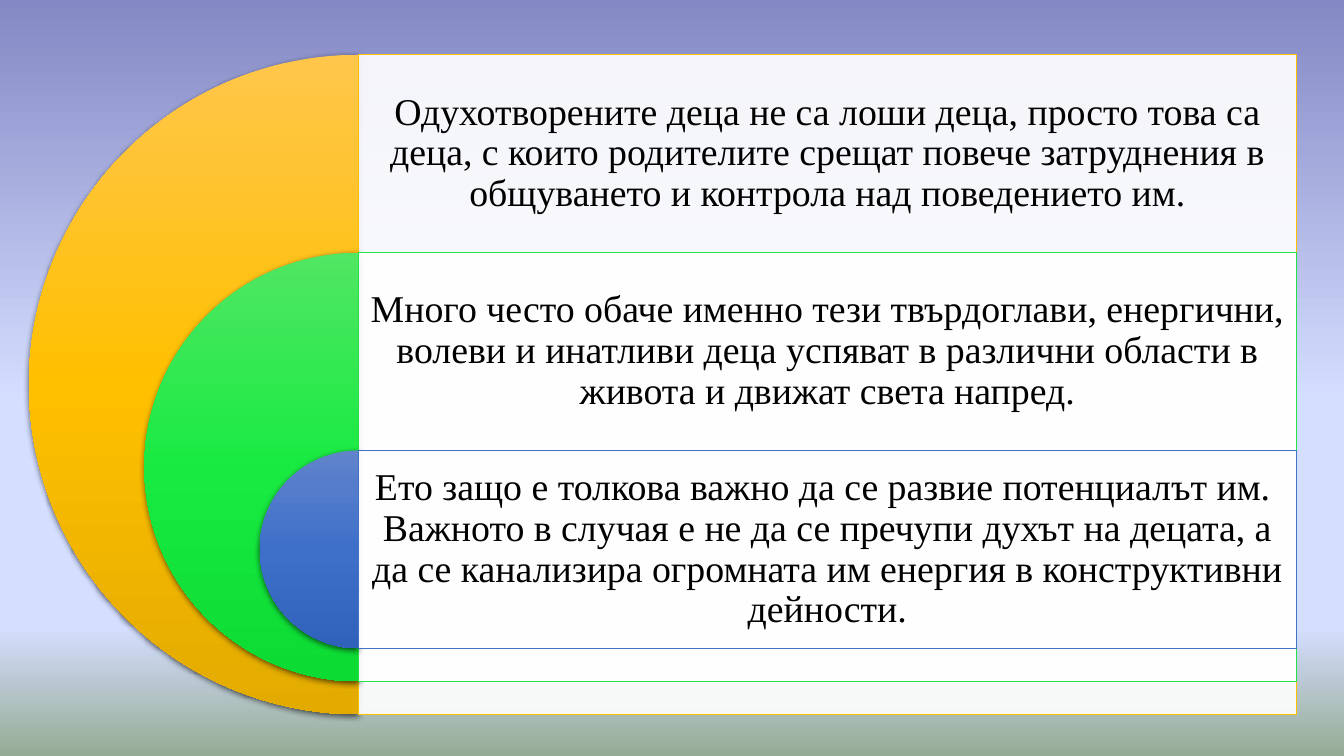
from dataclasses import dataclass

from lxml import etree
from pptx import Presentation
from pptx.dml.color import RGBColor
from pptx.enum import shapes, text
from pptx.oxml.ns import qn
from pptx.util import Cm, Pt


@dataclass(frozen=True)
class Theme:
    font: str = "Times New Roman"
    size: float = 27
    ink: str = "000000"
    panel: str = "FFFFFF"
    panel_opacity: int = 90
    shadow_opacity: int = 63
    backdrop: tuple = ((0, "8488C4"), (53, "D4DEFF"), (83, "D4DEFF"), (100, "96AB94"))
    # Gradient of each half disc, with the outline of its panel
    rings: tuple = (
        (((0, "FFC64B"), (50, "FFC000"), (100, "E3AB00")), "FFC000"),
        (((0, "51E663"), (50, "19EA42"), (100, "0CDB34")), "23E148"),
        (((0, "6183CB"), (50, "3E70CA"), (100, "3062BB")), "4472C4"),
    )


THEME = Theme()

# Each message is a list of lines
MESSAGES = [
    ["Одухотворените деца не са лоши деца, просто това са деца, с които родителите "
     "срещат повече затруднения в общуването и контрола над поведението им."],
    ["Много често обаче именно тези твърдоглави, енергични, волеви и инатливи деца "
     "успяват в различни области в живота и движат света напред."],
    ["Ето защо е толкова важно да се развие потенциалът им. ",
     "Важното в случая е не да се пречупи духът на децата, а да се канализира "
     "огромната им енергия в конструктивни дейности."],
]


def add_color(parent, color, opacity=100):
    srgb = etree.SubElement(parent, qn("a:srgbClr"), val=color)
    if opacity < 100:
        etree.SubElement(srgb, qn("a:alpha"), val=str(opacity * 1000))


def fill_downward(fill, owner, stops):
    """Fill with a top-to-bottom gradient; owner is the element holding the fill."""
    fill.gradient()
    fill.gradient_angle = 270
    stop_list = owner.find(".//" + qn("a:gsLst"))
    for old_stop in list(stop_list):
        stop_list.remove(old_stop)
    for position, color in stops:
        stop = etree.SubElement(stop_list, qn("a:gs"), pos=str(position * 1000))
        add_color(stop, color)


def add_half_disc(slide, axis, top, diameter, stops):
    """Left half of a disc whose flat side lies on the axis."""
    disc = slide.shapes.add_shape(
        shapes.MSO_SHAPE.PIE, Cm(axis - diameter / 2), Cm(top), Cm(diameter), Cm(diameter))
    disc.adjustments[0], disc.adjustments[1] = 54, 162
    fill_downward(disc.fill, disc.element, stops)
    disc.line.fill.background()
    disc.shadow.inherit = False
    effects = disc.element.find(".//" + qn("a:effectLst"))
    shadow = etree.SubElement(
        effects, qn("a:outerShdw"), blurRad=str(Pt(4.5)), dist=str(Pt(1.5)),
        dir="5400000", algn="ctr", rotWithShape="0")
    add_color(shadow, THEME.ink, THEME.shadow_opacity)


def add_panel(slide, left, top, width, height, outline):
    panel = slide.shapes.add_shape(
        shapes.MSO_SHAPE.RECTANGLE, Cm(left), Cm(top), Cm(width), Cm(height))
    panel.fill.solid()
    panel.fill.fore_color.rgb = RGBColor.from_string(THEME.panel)
    color = panel.element.spPr.find(qn("a:solidFill")).find(qn("a:srgbClr"))
    etree.SubElement(color, qn("a:alpha"), val=str(THEME.panel_opacity * 1000))
    panel.line.color.rgb = RGBColor.from_string(outline)
    panel.line.width = Pt(0.5)
    panel.shadow.inherit = False


def add_message(slide, left, top, width, height, lines):
    frame = slide.shapes.add_textbox(Cm(left), Cm(top), Cm(width), Cm(height)).text_frame
    frame.word_wrap = True
    frame.vertical_anchor = text.MSO_ANCHOR.MIDDLE
    frame.margin_left = frame.margin_right = Cm(0.28)
    frame.margin_top = frame.margin_bottom = Cm(0.28)
    paragraph = frame.paragraphs[0]
    paragraph.alignment = text.PP_ALIGN.CENTER
    paragraph.line_spacing = 0.9
    for index, line in enumerate(lines):
        if index:
            paragraph.add_line_break()
        run = paragraph.add_run()
        run.text = line
        run.font.name = THEME.font
        run.font.size = Pt(THEME.size)
        run.font.color.rgb = RGBColor.from_string(THEME.ink)


def add_target_list(slide, left, top, width, height):
    """Nested half discs, each opening into a panel with its message at the top."""
    axis = left + height / 2
    panel_width = width - height / 2
    band = 0.3 * height
    for level, ((stops, outline), lines) in enumerate(zip(THEME.rings, MESSAGES)):
        diameter = height * (1 - 0.35 * level)
        ring_top = top + band * level
        add_half_disc(slide, axis, ring_top, diameter, stops)
        add_panel(slide, axis, ring_top, panel_width, diameter, outline)
        add_message(slide, axis, ring_top, panel_width, band, lines)


def main():
    deck = Presentation()
    deck.slide_width, deck.slide_height = Cm(33.87), Cm(19.05)
    slide = deck.slides.add_slide(deck.slide_layouts[6])
    fill_downward(slide.background.fill, slide.element, THEME.backdrop)
    add_target_list(slide, left=0.73, top=1.38, width=31.93, height=16.62)
    deck.save("out.pptx")


if __name__ == "__main__":
    main()
